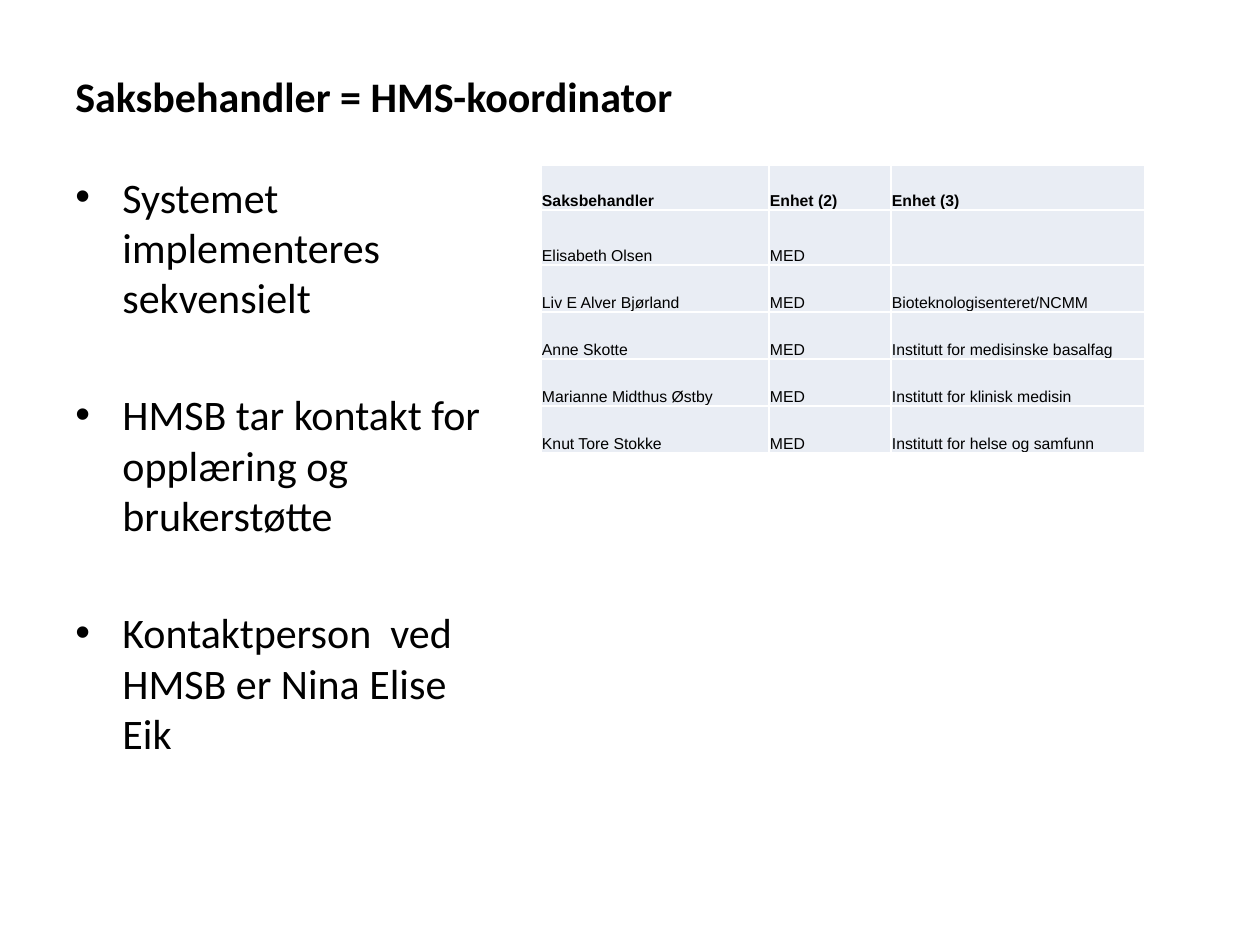
from dataclasses import dataclass

from pptx import Presentation
from pptx.dml.color import RGBColor
from pptx.enum.text import MSO_ANCHOR
from pptx.oxml import parse_xml
from pptx.oxml.ns import nsdecls
from pptx.util import Emu, Pt

MIDDLE, BOTTOM, TOP = MSO_ANCHOR.MIDDLE, MSO_ANCHOR.BOTTOM, MSO_ANCHOR.TOP
EMU_PER_PX = 914400 / 126
COLORS = {"text": "000000", "cell": "E9EDF4", "border": "FFFFFF"}
BULLET_INDENT = 47
COLUMN_WIDTHS = [228, 122, 254]
ROW_HEIGHTS = [45, 55, 47, 47, 47, 47]
BULLETS = [
    "Systemet implementeres sekvensielt",
    "HMSB tar kontakt for opplæring og brukerstøtte",
    "Kontaktperson  ved HMSB er Nina Elise Eik",
]


@dataclass(frozen=True)
class Box:
    left: int
    top: int
    width: int
    height: int

    def emu(self) -> list[Emu]:
        """Return the position and size in EMU."""
        return [px(value) for value in (self.left, self.top, self.width, self.height)]


@dataclass(frozen=True)
class CaseHandler:
    name: str
    unit: str
    subunit: str


HEADER = CaseHandler("Saksbehandler", "Enhet (2)", "Enhet (3)")
HANDLERS = [
    CaseHandler("Elisabeth Olsen", "MED", ""),
    CaseHandler("Liv E Alver Bjørland", "MED", "Bioteknologisenteret/NCMM"),
    CaseHandler("Anne Skotte", "MED", "Institutt for medisinske basalfag"),
    CaseHandler("Marianne Midthus Østby", "MED", "Institutt for klinisk medisin"),
    CaseHandler("Knut Tore Stokke", "MED", "Institutt for helse og samfunn"),
]


def px(value: int) -> Emu:
    """Turn whole pixels into EMU."""
    return Emu(round(value * EMU_PER_PX))


def write_text(paragraph, text: str, *, font: str = "Calibri", size: int = 24,
               bold: bool = False, bullet: bool = False, space_before: int = 0) -> None:
    """Fill a paragraph with formatted text."""
    if bullet:
        properties = paragraph._p.get_or_add_pPr()
        properties.set("marL", str(px(BULLET_INDENT)))
        properties.set("indent", str(-px(BULLET_INDENT)))
        properties.append(parse_xml(f'<a:buFont {nsdecls("a")} typeface="Arial"/>'))
        properties.append(parse_xml(f'<a:buChar {nsdecls("a")} char="•"/>'))
    paragraph.space_before = Pt(space_before)
    paragraph.font.size = Pt(size)
    if text:
        run = paragraph.add_run()
        run.text = text
        run.font.name, run.font.size, run.font.bold = font, Pt(size), bold
        run.font.color.rgb = RGBColor.from_string(COLORS["text"])


def add_text_frame(slide, box: Box, anchor: MSO_ANCHOR):
    """Add a wrapping text box and return its text frame."""
    frame = slide.shapes.add_textbox(*box.emu()).text_frame
    frame.word_wrap = True
    frame.vertical_anchor = anchor
    return frame


def add_bullets(slide, box: Box, items: list[str]) -> None:
    """Add a bulleted list with wide gaps between the items."""
    frame = add_text_frame(slide, box, TOP)
    for index, item in enumerate(items):
        paragraph = frame.add_paragraph() if index else frame.paragraphs[0]
        write_text(paragraph, item, bullet=True, space_before=38 if index else 0)


def style_cell(cell) -> None:
    """Give a table cell its margins, fill and borders."""
    cell.margin_left = cell.margin_right = cell.margin_top = px(1)
    cell.margin_bottom = 0
    cell.vertical_anchor = BOTTOM
    cell.fill.solid()
    cell.fill.fore_color.rgb = RGBColor.from_string(COLORS["cell"])
    properties = cell._tc.get_or_add_tcPr()
    for position, side in enumerate("LRTB"):
        properties.insert(position, parse_xml(
            f'<a:ln{side} {nsdecls("a")} w="{Pt(1)}"><a:solidFill>'
            f'<a:srgbClr val="{COLORS["border"]}"/></a:solidFill></a:ln{side}>'))


def add_handler_table(slide, left: int, top: int) -> None:
    """Add the table of case handlers and their units."""
    box = Box(left, top, sum(COLUMN_WIDTHS), sum(ROW_HEIGHTS))
    table = slide.shapes.add_table(len(ROW_HEIGHTS), len(COLUMN_WIDTHS), *box.emu()).table
    table.first_row = table.horz_banding = False
    for column, width in zip(table.columns, COLUMN_WIDTHS):
        column.width = px(width)
    for row, height, handler in zip(table.rows, ROW_HEIGHTS, [HEADER, *HANDLERS]):
        row.height = px(height)
        for cell, text in zip(row.cells, (handler.name, handler.unit, handler.subunit)):
            style_cell(cell)
            write_text(cell.text_frame.paragraphs[0], text, font="Arial", size=9,
                       bold=handler is HEADER)


def main() -> None:
    """Build the slide and save it."""
    presentation = Presentation()
    presentation.slide_width, presentation.slide_height = px(1260), px(945)
    slide = presentation.slides.add_slide(presentation.slide_layouts[6])
    title = add_text_frame(slide, Box(63, 38, 1134, 115), MIDDLE)
    write_text(title.paragraphs[0], "Saksbehandler = HMS-koordinator", bold=True)
    add_bullets(slide, Box(63, 165, 449, 679), BULLETS)
    add_handler_table(slide, 541, 165)
    presentation.save("out.pptx")


if __name__ == "__main__":
    main()
